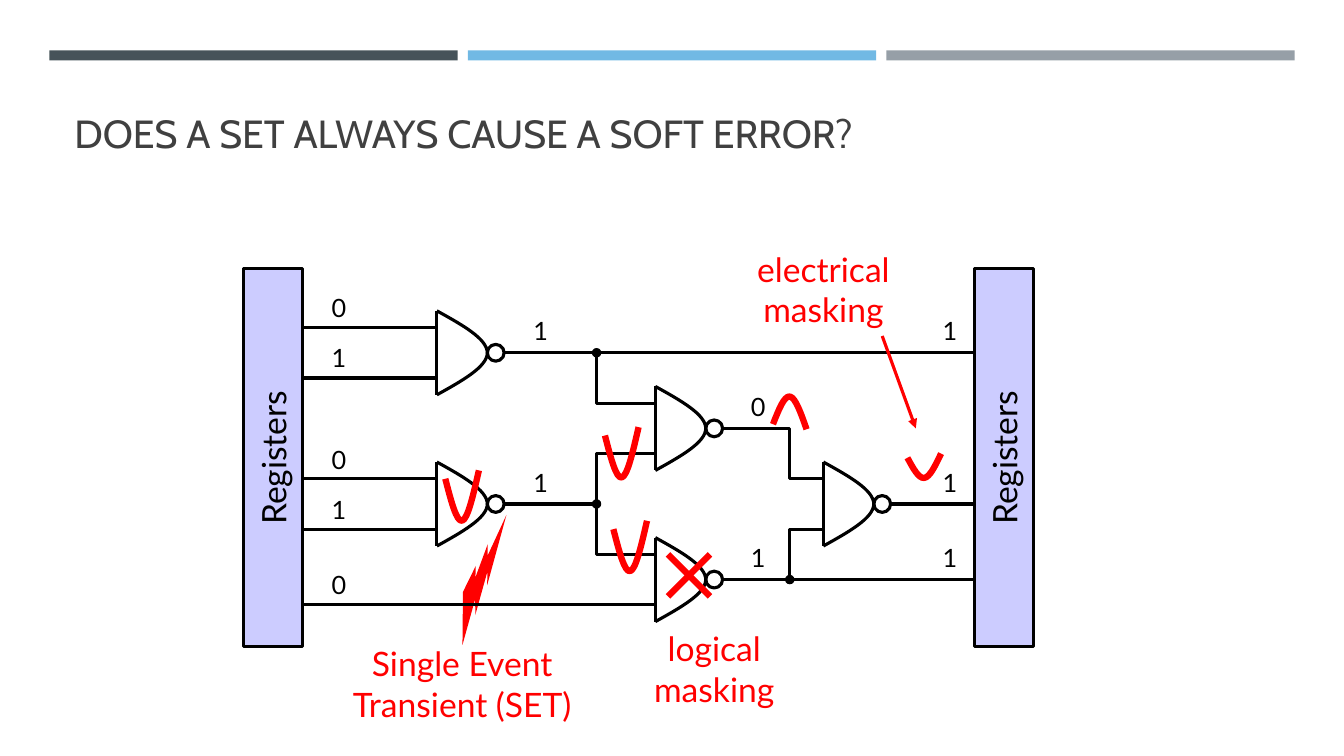
import pptx
import pptx.util
import pptx.dml.color
import pptx.enum.shapes
import pptx.enum.text
import pptx.oxml.ns
import pptx.oxml.xmlchemy
from dataclasses import dataclass

Inches = pptx.util.Inches
Shape = pptx.enum.shapes.MSO_SHAPE
Align = pptx.enum.text.PP_ALIGN
Anchor = pptx.enum.text.MSO_ANCHOR
Node = pptx.oxml.xmlchemy.OxmlElement


@dataclass(frozen=True)
class Theme:
    """Colours, fonts and sizes of the slide."""
    bars: tuple = ("465359", "71B9E4", "969FA7")
    title: str = "404040"
    ink: str = "000000"
    fault: str = "FF0000"
    store: str = "CCCCFF"
    head: str = "Cabin"
    body: str = "Lato"
    big: float = 28
    note: float = 24
    bit: float = 18
    wire: float = 2.25
    pulse: float = 4.5
    dot: float = 0.75


THEME = Theme()


def rgb(code):
    """Turn a hex code into a colour."""
    return pptx.dml.color.RGBColor.from_string(code)


def paint(shape, fill=None, line=None, width=THEME.wire):
    """Set fill and outline, without shadow."""
    shape.shadow.inherit = False
    if fill:
        shape.fill.solid()
        shape.fill.fore_color.rgb = rgb(fill)
    else:
        shape.fill.background()
    if line:
        shape.line.color.rgb = rgb(line)
        shape.line.width = pptx.util.Pt(width)
    else:
        shape.line.fill.background()


def write(shape, text, size, color, font=THEME.body, align=Align.CENTER,
          anchor=Anchor.TOP, wrap=True):
    """Put one styled paragraph into a shape."""
    frame = shape.text_frame
    frame.word_wrap = wrap
    frame.vertical_anchor = anchor
    para = frame.paragraphs[0]
    para.text = text
    para.alignment = align
    para.font.name = font
    para.font.size = pptx.util.Pt(size)
    para.font.color.rgb = rgb(color)


class Grid:
    """Draws on a grid of twelfths of an inch from a given corner."""

    def __init__(self, slide, left, top):
        """Keep the corner and the shapes."""
        self.shapes = slide.shapes
        self.left, self.top = left, top

    def spot(self, x, y):
        """Give the slide position of a grid point."""
        return Inches(self.left + x / 12), Inches(self.top + y / 12)

    def area(self, x, y, w, h):
        """Give the slide box of a grid box."""
        return *self.spot(x, y), Inches(w / 12), Inches(h / 12)

    def shape(self, kind, box, fill=None, line=None, width=THEME.wire):
        """Add a preset shape."""
        item = self.shapes.add_shape(kind, *self.area(*box))
        paint(item, fill, line, width)
        return item

    def text(self, text, box, size, color, **style):
        """Add a text box."""
        write(self.shapes.add_textbox(*self.area(*box)), text, size, color, **style)

    def line(self, start, end, color=THEME.ink, width=THEME.wire, arrow=False):
        """Add a straight line, with an arrowhead if asked."""
        item = self.shapes.add_connector(
            pptx.enum.shapes.MSO_CONNECTOR.STRAIGHT, *self.spot(*start), *self.spot(*end))
        item.line.color.rgb = rgb(color)
        item.line.width = pptx.util.Pt(width)
        props = item._element.spPr
        if arrow:
            tail = Node("a:tailEnd")
            tail.set("type", "triangle")
            props.find(pptx.oxml.ns.qn("a:ln")).append(tail)
        props.append(Node("a:effectLst"))

    def route(self, points, color=THEME.ink, width=THEME.wire):
        """Add an open line through points."""
        spots = [self.spot(*point) for point in points]
        pen = self.shapes.build_freeform(*spots[0])
        pen.add_line_segments(spots[1:], close=False)
        item = pen.convert_to_shape()
        paint(item, None, color, width)
        return item

    def curve(self, start, tip, end, color=THEME.ink, width=THEME.wire):
        """Add a smooth arc of two cubic segments through three points."""
        slope = [(b - a) / 6 for a, b in zip(start, end)]
        near = [t - s for t, s in zip(tip, slope)]
        far = [t + s for t, s in zip(tip, slope)]
        mid = [(a + b) / 2 for a, b in zip(start, near)]
        last = [(a + b) / 2 for a, b in zip(far, end)]
        item = self.route([start, mid, near, tip, far, last, end], color, width)
        steps = list(item._element.iter(pptx.oxml.ns.qn("a:lnTo")))
        for i in (0, 3):
            arc = Node("a:cubicBezTo")
            steps[i].addprevious(arc)
            for step in steps[i:i + 3]:
                arc.append(step[0])
                step.getparent().remove(step)


def header(slide, left, top, width):
    """Draw the three bars and the title."""
    gap = 0.1
    bar = (width - 2 * gap) / 3
    for i, color in enumerate(THEME.bars):
        paint(slide.shapes.add_shape(Shape.RECTANGLE, Inches(left + i * (bar + gap)),
                                     Inches(top), Inches(bar), Inches(0.1)), color)
    title = slide.shapes.add_textbox(Inches(left + 0.15), Inches(top + 0.27),
                                     Inches(12.06), Inches(1.3))
    write(title, "DOES A SET ALWAYS CAUSE A SOFT ERROR?", THEME.big, THEME.title,
          THEME.head, Align.LEFT, Anchor.BOTTOM)
    title.text_frame.margin_bottom = Inches(0.52)


def gate(grid, x, mid):
    """Draw a gate with its output bubble."""
    grid.curve((x, mid - 5), (x + 6, mid), (x, mid + 5))
    grid.line((x, mid - 5), (x, mid + 5))
    grid.shape(Shape.OVAL, (x + 6, mid - 1, 2, 2), line=THEME.ink)


def circuit(grid):
    """Draw registers, gates, wires and bit values."""
    for x in (0, 87):
        store = grid.shape(Shape.RECTANGLE, (x, 0, 7, 45), THEME.store, THEME.ink)
        write(store, "Registers", THEME.note, THEME.ink, anchor=Anchor.MIDDLE, wrap=False)
        store.text_frame._txBody.bodyPr.set("vert", "vert270")
    for x, mid in ((23, 10), (23, 28), (49, 19), (49, 37), (69, 28)):
        gate(grid, x, mid)
    for x, y, end in ((7, 7, 23), (7, 13, 23), (7, 25, 23), (7, 31, 23), (7, 40, 49),
                      (42, 10, 87), (77, 28, 87), (65, 37, 87)):
        grid.line((x, y), (end, y))
    for x, y, turn, to, end in ((31, 10, 42, 16, 49), (31, 28, 42, 22, 49),
                                (57, 19, 65, 25, 69), (57, 37, 65, 31, 69)):
        grid.route([(x, y), (turn, y), (turn, to), (end, to)])
    grid.route([(42, 28), (42, 34), (49, 34)])
    for x, y in ((42, 10), (42, 28), (65, 37)):
        grid.shape(Shape.OVAL, (x - 0.5, y - 0.5, 1, 1), THEME.ink, THEME.ink, THEME.dot)
    for bit, x, y in (("0", 11.3, 7), ("1", 11.3, 13), ("0", 11.3, 25.1), ("1", 11.3, 31.1),
                      ("0", 11.3, 40), ("1", 35.3, 9.8), ("1", 35.3, 27.8), ("0", 61.2, 18.8),
                      ("1", 61.2, 36.8), ("1", 84, 9.8), ("1", 84, 27.8), ("1", 84, 36.8)):
        grid.text(bit, (x - 2, y - 4.8, 4, 4.8), THEME.bit, THEME.ink, wrap=False)


def faults(grid):
    """Draw the pulses, the masking cross and the callouts."""
    for x, left, tip, right in ((24, 25, 30, 24), (43, 19.85, 24.85, 18.85), (44, 31, 36, 30),
                                (63, 18.5, 15.2, 19.1), (79, 22.5, 24.9, 22)):
        grid.curve((x, left), (x + 2, tip), (x + 4, right), THEME.fault, THEME.pulse)
    for start, end in ((34, 39), (39, 34)):
        grid.line((50.5, start), (55.5, end), THEME.fault, THEME.pulse)
    for text, box in (("Single Event Transient (SET)", (10, 44, 32, 11)),
                      ("logical masking", (42, 42.2, 28, 11)),
                      ("electrical masking", (55, -3, 28, 11))):
        grid.text(text, box, THEME.note, THEME.fault)
    grid.line((76, 8), (80, 19), THEME.fault, arrow=True)


def strike(grid):
    """Draw the lightning bolt under the struck gate."""
    bolt = grid.shape(Shape.LIGHTNING_BOLT, (20.3, 35, 16, 4), THEME.fault)
    bolt.rotation = 277.1


def main():
    """Build and save the slide."""
    deck = pptx.Presentation()
    deck.slide_width, deck.slide_height = Inches(13.33), Inches(7.5)
    slide = deck.slides.add_slide(deck.slide_layouts[6])
    header(slide, 0.49, 0.5, 12.35)
    grid = Grid(slide, 29 / 12, 32 / 12)
    strike(grid)
    circuit(grid)
    faults(grid)
    deck.save("out.pptx")


if __name__ == "__main__":
    main()
